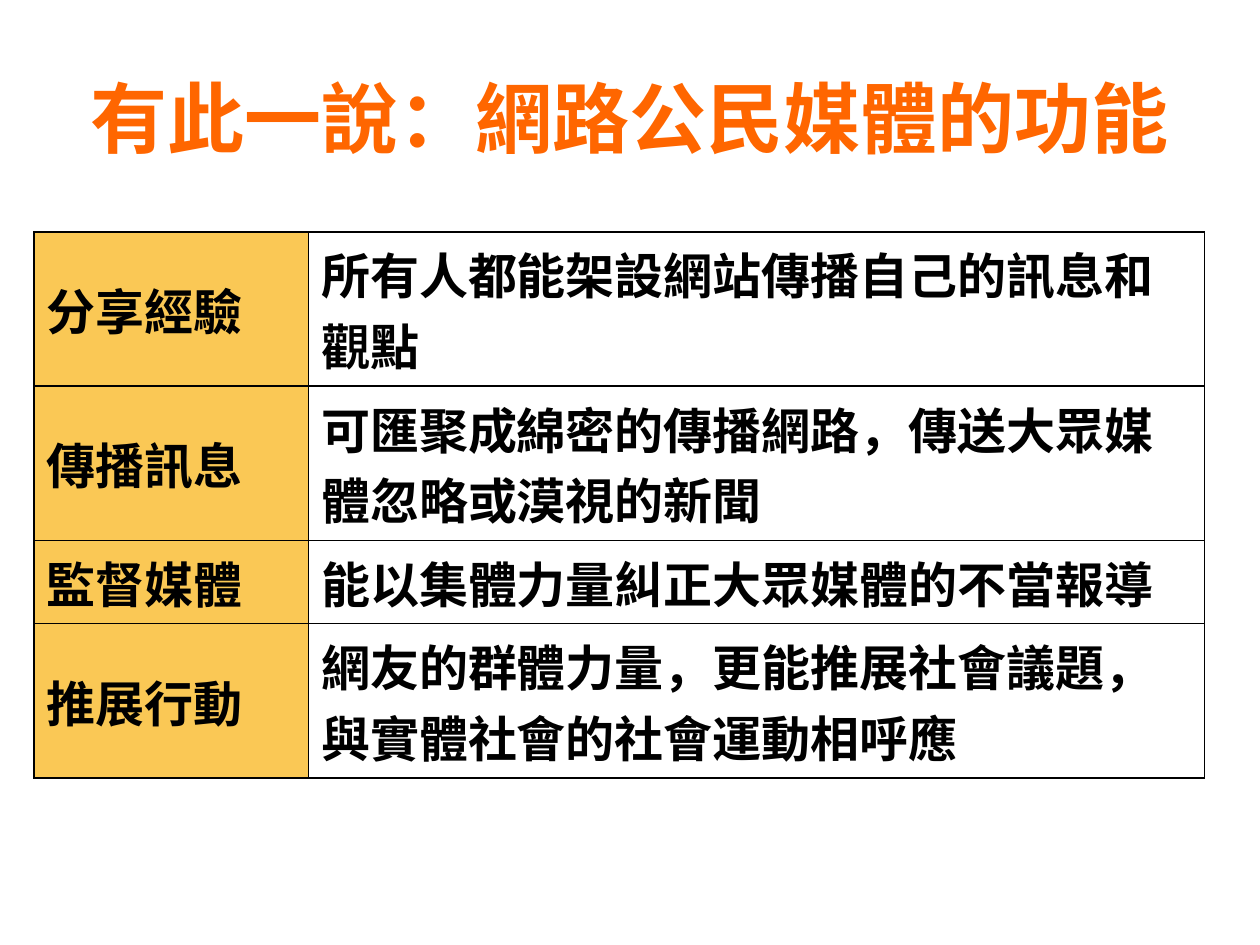
import pptx
import pptx.dml.color
import pptx.enum.text
import pptx.oxml
import pptx.oxml.ns
import pptx.util

Inches = pptx.util.Inches
Pt = pptx.util.Pt
RGB = pptx.dml.color.RGBColor
MIDDLE = pptx.enum.text.MSO_ANCHOR.MIDDLE
CENTER = pptx.enum.text.PP_ALIGN.CENTER

ORANGE = RGB(0xFF, 0x66, 0x00)
GOLD = RGB(0xFA, 0xC8, 0x55)
BLACK = RGB(0x00, 0x00, 0x00)
WIDE, HIGH = Inches(10), Inches(7.5)
SANS = "Noto Sans CJK SC"

TITLE = "有此一說：網路公民媒體的功能"
ROWS = [
    ("分享經驗", "所有人都能架設網站傳播自己的訊息和觀點", 2),
    ("傳播訊息", "可匯聚成綿密的傳播網路，傳送大眾媒體忽略或漠視的新聞", 2),
    ("監督媒體", "能以集體力量糾正大眾媒體的不當報導", 1),
    ("推展行動", "網友的群體力量，更能推展社會議題，與實體社會的社會運動相呼應", 2),
]
TALL = {1: Inches(0.66), 2: Inches(1.22)}


def style(para, face, size, color):
    font = para.font
    font.name, font.size, font.bold = face, Pt(size), True
    font.color.rgb = color
    return font


def border(cell):
    props = cell._tc.get_or_add_tcPr()
    for i, side in enumerate("LRTB"):
        props.insert(i, pptx.oxml.parse_xml(
            f'<a:ln{side} {pptx.oxml.ns.nsdecls("a")} w="{Pt(1)}">'
            f'<a:solidFill><a:srgbClr val="{BLACK}"/></a:solidFill></a:ln{side}>'))


def heading(slide, box):
    title = slide.shapes.title
    title.left, title.top, title.width, title.height = box
    frame = title.text_frame
    frame.text = TITLE
    frame.vertical_anchor = MIDDLE
    para = frame.paragraphs[0]
    para.alignment = CENTER
    style(para, "Calibri", 44, ORANGE)


def entry(cell, text, fill):
    cell.text = text
    cell.vertical_anchor = MIDDLE
    if fill:
        cell.fill.solid()
        cell.fill.fore_color.rgb = fill
    else:
        cell.fill.background()
    font = style(cell.text_frame.paragraphs[0], SANS, 28, BLACK)
    east = pptx.oxml.parse_xml(
        f'<a:ea {pptx.oxml.ns.nsdecls("a")} typeface="{SANS}"/>')
    font._element.find(pptx.oxml.ns.qn("a:latin")).addnext(east)
    border(cell)


def grid(slide, left, top, widths):
    high = sum(TALL[lines] for _, _, lines in ROWS)
    table = slide.shapes.add_table(
        len(ROWS), len(widths), left, top, sum(widths), high).table
    table.first_row = table.horz_banding = False
    for col, width in zip(table.columns, widths):
        col.width = width
    for row, (name, text, lines) in zip(table.rows, ROWS):
        row.height = TALL[lines]
        entry(row.cells[0], name, GOLD)
        entry(row.cells[1], text, None)


def main():
    deck = pptx.Presentation()
    deck.slide_width, deck.slide_height = WIDE, HIGH
    slide = deck.slides.add_slide(deck.slide_layouts[5])
    heading(slide, (Inches(0.5), Inches(0.3), Inches(9), Inches(1.25)))
    grid(slide, Inches(0.27), Inches(1.84), (Inches(2.18), Inches(7.11)))
    deck.save("out.pptx")


if __name__ == "__main__":
    main()
